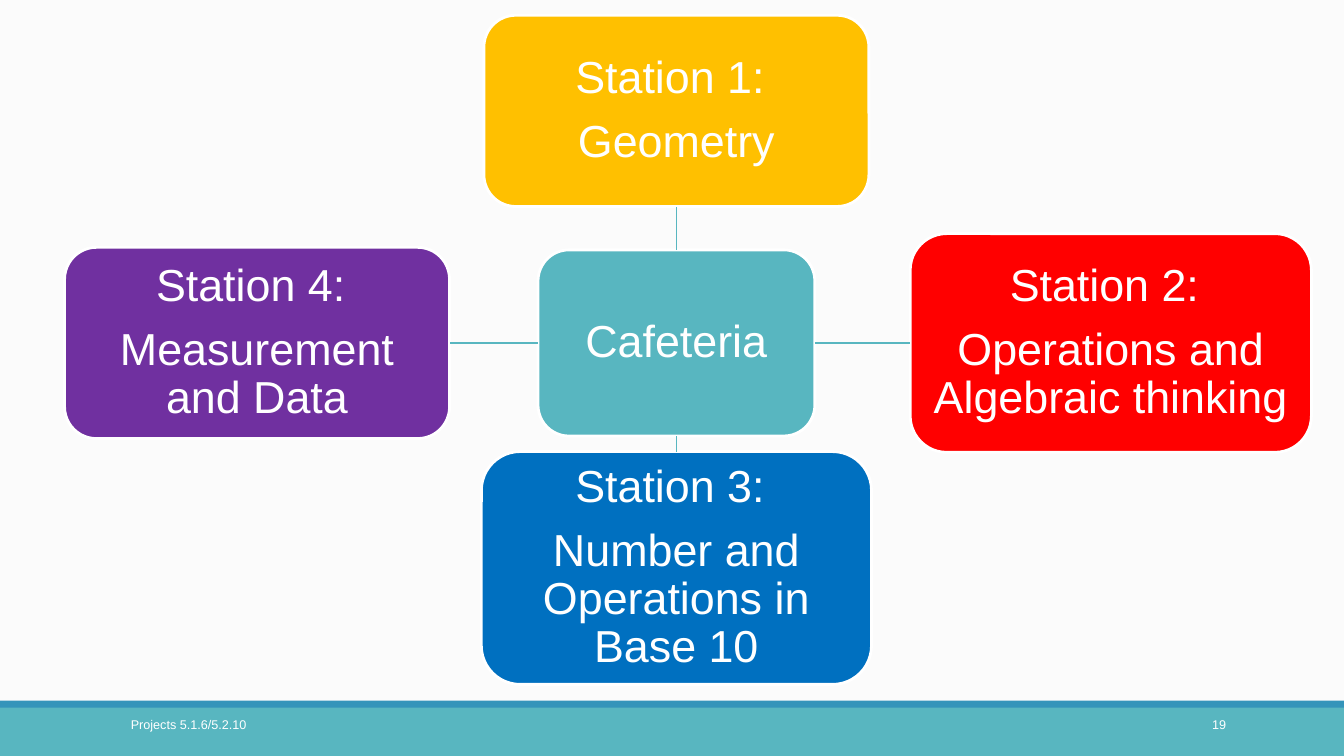
"""Build a slide with a cafeteria hub joined to four learning stations."""
from dataclasses import dataclass

from lxml.etree import SubElement
from pptx import Presentation
from pptx.dml.color import RGBColor
from pptx.enum.shapes import MSO_CONNECTOR, MSO_SHAPE
from pptx.enum.text import MSO_ANCHOR, PP_ALIGN
from pptx.oxml.ns import qn
from pptx.shapes.autoshape import Shape
from pptx.slide import Slide
from pptx.util import Inches, Pt

SLIDE_WIDTH, SLIDE_HEIGHT = Inches(13.33), Inches(7.5)
COLUMN, ROW = SLIDE_WIDTH / 100, SLIDE_HEIGHT / 100
CENTER_COLUMN, CENTER_ROW = 50.33, 45.37
FONT_NAME = "Arial"
TOP, LEFT, BOTTOM, RIGHT = range(4)

BACKGROUND = RGBColor(0xFB, 0xFB, 0xFB)
WHITE = RGBColor(0xFF, 0xFF, 0xFF)
TEAL = RGBColor(0x58, 0xB6, 0xC0)
STEEL = RGBColor(0x34, 0x94, 0xBA)
GOLD = RGBColor(0xFF, 0xC0, 0x00)
RED = RGBColor(0xFF, 0x00, 0x00)
BLUE = RGBColor(0x00, 0x70, 0xC0)
PURPLE = RGBColor(0x70, 0x30, 0xA0)


@dataclass(frozen=True)
class Box:
    """A rounded box, centred on a column and row of the grid."""
    text: str
    color: RGBColor
    width: float
    height: float
    column: float = CENTER_COLUMN
    row: float = CENTER_ROW


@dataclass(frozen=True)
class Station:
    """A box and the sides that join the hub to it."""
    box: Box
    hub_side: int
    station_side: int


@dataclass(frozen=True)
class Band:
    """A full-width footer band."""
    top: float
    height: float
    color: RGBColor


@dataclass(frozen=True)
class FooterText:
    """A small text in the footer."""
    text: str
    left: float
    width: float
    alignment: PP_ALIGN


HUB = Box("Cafeteria", TEAL, 20.6, 24.63)
STATIONS = (
    Station(Box("Station 1: \nGeometry", GOLD, 28.65, 25.3, row=14.67), TOP, BOTTOM),
    Station(Box("Station 2: \nOperations and Algebraic thinking", RED, 29.85, 28.93,
                column=82.65), RIGHT, LEFT),
    Station(Box("Station 3: \nNumber and Operations in Base 10", BLUE, 29.03, 30.8,
                row=75.13), BOTTOM, TOP),
    Station(Box("Station 4: \nMeasurement and Data", PURPLE, 28.65, 25.3,
                column=19.13), LEFT, RIGHT),
)
BANDS = (Band(93.33, 6.67, TEAL), Band(92.67, 0.93, STEEL))
FOOTER_TEXTS = (
    FooterText("Projects 5.1.6/5.2.10", 9, 20.25, PP_ALIGN.LEFT),
    FooterText("19", 81.23, 10.73, PP_ALIGN.RIGHT),
)


def grid(left: float, top: float, width: float, height: float) -> tuple[int, ...]:
    """Turn columns and rows into slide lengths."""
    return round(left * COLUMN), round(top * ROW), round(width * COLUMN), round(height * ROW)


def format_text(shape: Shape, size: int, alignment: PP_ALIGN) -> None:
    """Set the font and alignment of all text in a shape."""
    shape.text_frame.word_wrap = True
    for paragraph in shape.text_frame.paragraphs:
        paragraph.alignment = alignment
        for run in paragraph.runs:
            run.font.name = FONT_NAME
            run.font.size = Pt(size)
            run.font.color.rgb = WHITE


def add_band(slide: Slide, band: Band) -> None:
    """Draw a footer band."""
    shape = slide.shapes.add_shape(MSO_SHAPE.RECTANGLE, *grid(0, band.top, 100, band.height))
    shape.shadow.inherit = False
    shape.fill.solid()
    shape.fill.fore_color.rgb = band.color
    shape.line.fill.background()


def add_footer_text(slide: Slide, footer: FooterText) -> None:
    """Write a text in the footer."""
    shape = slide.shapes.add_textbox(*grid(footer.left, 94.13, footer.width, 5.33))
    shape.text_frame.text = footer.text
    format_text(shape, 9, footer.alignment)


def add_box(slide: Slide, box: Box) -> Shape:
    """Draw a rounded box with its text."""
    shape = slide.shapes.add_shape(
        MSO_SHAPE.ROUNDED_RECTANGLE,
        *grid(box.column - box.width / 2, box.row - box.height / 2, box.width, box.height))
    shape.shadow.inherit = False
    shape.fill.solid()
    shape.fill.fore_color.rgb = box.color
    shape.line.color.rgb = WHITE
    shape.line.width = Pt(2)
    text_frame = shape.text_frame
    text_frame.text = box.text
    text_frame.vertical_anchor = MSO_ANCHOR.MIDDLE
    text_frame.margin_left = text_frame.margin_right = Inches(0.09)
    text_frame.margin_top = text_frame.margin_bottom = Inches(0.09)
    format_text(shape, 32, PP_ALIGN.CENTER)
    for paragraph in text_frame.paragraphs:
        paragraph.line_spacing = 0.9
    for paragraph in text_frame.paragraphs[1:]:
        paragraph.space_before = Pt(11.2)
    return shape


def add_station(slide: Slide, hub: Shape, station: Station) -> None:
    """Draw a station and join it to the hub."""
    shape = add_box(slide, station.box)
    connector = slide.shapes.add_connector(MSO_CONNECTOR.STRAIGHT, 0, 0, 0, 0)
    connector.begin_connect(hub, station.hub_side)
    connector.end_connect(shape, station.station_side)
    connector.line.color.rgb = TEAL
    connector.line.width = Pt(1.25)
    SubElement(connector._element.spPr, qn("a:effectLst"))


def main() -> None:
    """Build and save the presentation."""
    presentation = Presentation()
    presentation.slide_width, presentation.slide_height = SLIDE_WIDTH, SLIDE_HEIGHT
    slide = presentation.slides.add_slide(presentation.slide_layouts[6])
    slide.background.fill.solid()
    slide.background.fill.fore_color.rgb = BACKGROUND
    for band in BANDS:
        add_band(slide, band)
    for footer in FOOTER_TEXTS:
        add_footer_text(slide, footer)
    hub = add_box(slide, HUB)
    for station in STATIONS:
        add_station(slide, hub, station)
    presentation.save("out.pptx")


if __name__ == "__main__":
    main()
